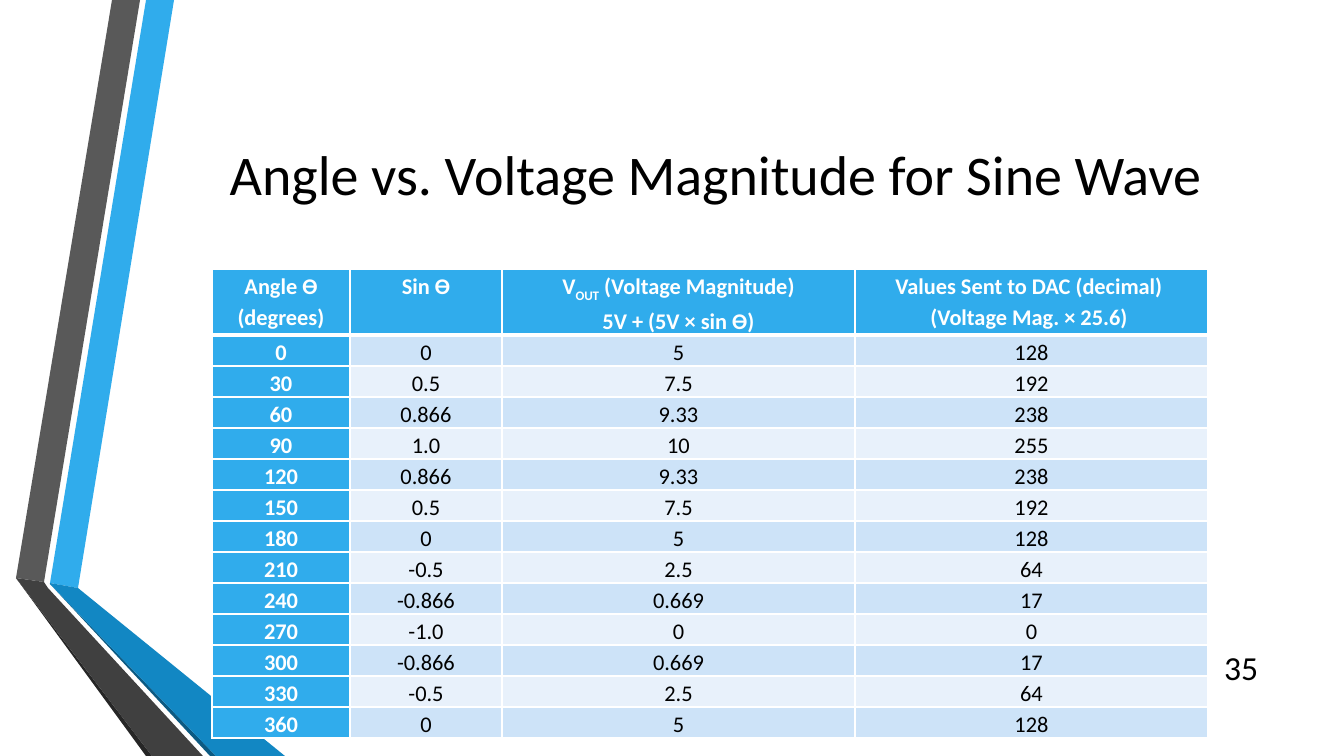
import pptx
import pptx.dml.color
import pptx.enum.text
import pptx.oxml.ns
import pptx.util
import lxml.etree

PX = 12192000 / 1344  # EMU per px on a 1344 x 756 slide
FONT = "Calibri"
COLORS = {
    "white": "FFFFFF", "black": "000000", "blue": "30ACEC",
    "deep_blue": "1287C3", "navy": "0C5A82", "gray": "595959",
    "charcoal": "404040", "near_black": "262626",
    "band_dark": "CDE3F8", "band_light": "E8F1FB",
}

# Ribbons at the left edge, back to front
RIBBONS = [
    ("blue", [(50, 583), (78, 588), (174, 0), (146, 0)]),
    ("gray", [(140, 0), (112, 0), (16, 578), (44, 582)]),
    ("near_black", [(16, 578), (146, 756), (152, 756)]),
    ("navy", [(50, 584), (210, 756), (216, 756)]),
    ("deep_blue", [(50, 584), (216, 756), (285, 756), (78, 588), (50, 583)]),
    ("charcoal", [(203, 756), (48, 588), (44, 582), (16, 578), (152, 756)]),
]

# Header cells: paragraphs of (text, is subscript) runs
HEADER = [
    [[("Angle Ɵ", False)], [("(degrees)", False)]],
    [[("Sin Ɵ", False)]],
    [[("V", False), ("OUT", True), (" (Voltage Magnitude)", False)],
     [("5V + (5V × sin Ɵ)", False)]],
    [[("Values Sent to DAC (decimal) ", False)],
     [("(Voltage Mag. × 25.6) ", False)]],
]

# Sine, output voltage and DAC value for every 30 degrees
ANGLE_STEP = 30
SAMPLES = [
    ("0", "5", "128"), ("0.5", "7.5", "192"), ("0.866", "9.33", "238"),
    ("1.0", "10", "255"), ("0.866", "9.33", "238"), ("0.5", "7.5", "192"),
    ("0", "5", "128"), ("-0.5", "2.5", "64"), ("-0.866", "0.669", "17"),
    ("-1.0", "0", "0"), ("-0.866", "0.669", "17"), ("-0.5", "2.5", "64"),
    ("0", "5", "128"),
]
COL_WIDTHS = [138, 152, 353, 353]
HEADER_HEIGHT, ROW_HEIGHT = 63, 31


def px(n):
    return pptx.util.Emu(round(n * PX))


def rgb(name):
    return pptx.dml.color.RGBColor.from_string(COLORS[name])


def add_run(p, text, size, color, bold=False, subscript=False):
    r = p.add_run()
    r.text = text
    r.font.name = FONT
    r.font.size = pptx.util.Pt(size)
    r.font.bold = bold
    r.font.color.rgb = rgb(color)
    if subscript:
        r.font._element.set("baseline", "-25000")


def add_ribbon(s, color, points):
    builder = s.shapes.build_freeform(*points[0], scale=PX)
    builder.add_line_segments(points[1:], close=True)
    sp = builder.convert_to_shape()
    sp.shadow.inherit = False
    sp.fill.solid()
    sp.fill.fore_color.rgb = rgb(color)
    sp.line.fill.background()


def add_label(s, box, text, size, align):
    tf = s.shapes.add_textbox(*map(px, box)).text_frame
    tf.word_wrap = True
    tf.vertical_anchor = pptx.enum.text.MSO_ANCHOR.MIDDLE
    p = tf.paragraphs[0]
    p.alignment = align
    add_run(p, text, size, "black")


def set_borders(cell, widths):
    tcPr = cell._tc.get_or_add_tcPr()
    for i, (side, width) in enumerate(widths.items()):
        ln = lxml.etree.Element(pptx.oxml.ns.qn(f"a:ln{side}"),
                                w=str(pptx.util.Pt(width)))
        fill = lxml.etree.SubElement(ln, pptx.oxml.ns.qn("a:solidFill"))
        lxml.etree.SubElement(fill, pptx.oxml.ns.qn("a:srgbClr"),
                              val=COLORS["white"])
        tcPr.insert(i, ln)  # borders come before the fill


def fill_cell(cell, paragraphs, fill, color, bold, top=1, bottom=1):
    cell.fill.solid()
    cell.fill.fore_color.rgb = rgb(fill)
    cell.margin_left = cell.margin_right = px(11)
    cell.margin_top = cell.margin_bottom = 0
    set_borders(cell, {"L": 1, "R": 1, "T": top, "B": bottom})
    tf = cell.text_frame
    for i, runs in enumerate(paragraphs):
        p = tf.add_paragraph() if i else tf.paragraphs[0]
        p.alignment = pptx.enum.text.PP_ALIGN.CENTER
        p.line_spacing = 1.15
        for text, subscript in runs:
            add_run(p, text, 16, color, bold, subscript)


def add_sine_table(s, left, top):
    heights = [HEADER_HEIGHT] + [ROW_HEIGHT] * len(SAMPLES)
    table = s.shapes.add_table(len(heights), len(COL_WIDTHS), px(left), px(top),
                               px(sum(COL_WIDTHS)), px(sum(heights))).table
    for col, width in zip(table.columns, COL_WIDTHS):
        col.width = px(width)
    for row, height in zip(table.rows, heights):
        row.height = px(height)

    # Header row, with a thick rule below
    for c, paragraphs in enumerate(HEADER):
        fill_cell(table.cell(0, c), paragraphs, "blue", "white", True, bottom=3)

    # Banded body with a blue angle column
    for r, sample in enumerate(SAMPLES, start=1):
        band = "band_dark" if r % 2 else "band_light"
        rule = 3 if r == 1 else 1
        for c, text in enumerate((str((r - 1) * ANGLE_STEP), *sample)):
            fill, color = (band, "black") if c else ("blue", "white")
            fill_cell(table.cell(r, c), [[(text, False)]], fill, color,
                      c == 0, top=rule)


def main():
    prs = pptx.Presentation()
    prs.slide_width, prs.slide_height = px(1344), px(756)
    s = prs.slides.add_slide(prs.slide_layouts[6])
    s.background.fill.solid()
    s.background.fill.fore_color.rgb = rgb("white")

    for color, points in RIBBONS:
        add_ribbon(s, color, points)

    # Title and page number
    add_label(s, (163, 76, 1105, 194), "Angle vs. Voltage Magnitude for Sine Wave",
              40, pptx.enum.text.PP_ALIGN.CENTER)
    add_label(s, (1208, 647, 60, 40), "35", 24, pptx.enum.text.PP_ALIGN.RIGHT)

    add_sine_table(s, 212, 269)
    prs.save("out.pptx")


if __name__ == "__main__":
    main()
